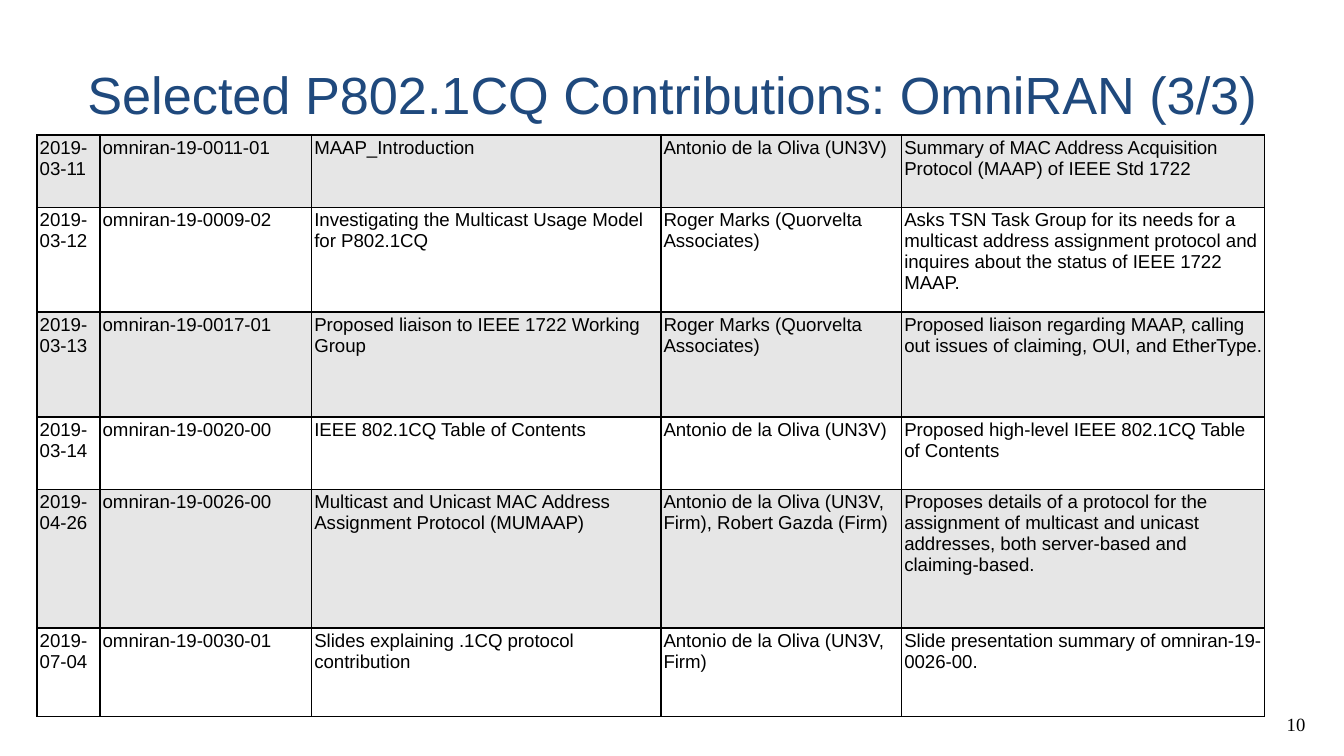
from lxml import etree
from pptx import Presentation
from pptx.dml.color import RGBColor
from pptx.enum.text import MSO_ANCHOR, PP_ALIGN
from pptx.oxml.ns import qn
from pptx.util import Cm, Pt

MIDDLE, TOP = MSO_ANCHOR.MIDDLE, MSO_ANCHOR.TOP
CENTER, RIGHT = PP_ALIGN.CENTER, PP_ALIGN.RIGHT
NAVY = RGBColor(0x1F, 0x49, 0x7D)
BLACK = RGBColor(0, 0, 0)
GRAY = RGBColor(0xE6, 0xE6, 0xE6)
WHITE = RGBColor(0xFF, 0xFF, 0xFF)

COLUMN_WIDTHS = [1.19, 4, 6.6, 4.55, 6.86]
ROW_HEIGHTS = [1.37, 1.98, 1.98, 1.37, 2.62, 1.67]
CONTRIBUTIONS = [
    ("2019-03-11", "omniran-19-0011-01", "MAAP_Introduction",
     "Antonio de la Oliva (UN3V)",
     "Summary of MAC Address Acquisition Protocol (MAAP) of IEEE Std 1722"),
    ("2019-03-12", "omniran-19-0009-02",
     "Investigating the Multicast Usage Model for P802.1CQ",
     "Roger Marks (Quorvelta Associates)",
     "Asks TSN Task Group for its needs for a multicast address assignment "
     "protocol and inquires about the status of IEEE 1722 MAAP."),
    ("2019-03-13", "omniran-19-0017-01",
     "Proposed liaison to IEEE 1722 Working Group",
     "Roger Marks (Quorvelta Associates)",
     "Proposed liaison regarding MAAP, calling out issues of claiming, OUI, and EtherType."),
    ("2019-03-14", "omniran-19-0020-00", "IEEE 802.1CQ Table of Contents",
     "Antonio de la Oliva (UN3V)",
     "Proposed high-level IEEE 802.1CQ Table of Contents"),
    ("2019-04-26", "omniran-19-0026-00",
     "Multicast and Unicast MAC Address Assignment Protocol (MUMAAP)",
     "Antonio de la Oliva (UN3V, Firm), Robert Gazda (Firm)",
     "Proposes details of a protocol for the assignment of multicast and unicast "
     "addresses, both server-based and claiming-based."),
    ("2019-07-04", "omniran-19-0030-01",
     "Slides explaining .1CQ protocol contribution",
     "Antonio de la Oliva (UN3V, Firm)",
     "Slide presentation summary of omniran-19-0026-00."),
]


def style_font(font, name, size, color):
    font.name = name
    font.size = Pt(size)
    font.color.rgb = color


def add_borders(cell, color):
    properties = cell._tc.get_or_add_tcPr()
    for position, side in enumerate(("lnL", "lnR", "lnT", "lnB")):
        line = etree.Element(qn(f"a:{side}"), w=str(Pt(1)))
        fill = etree.SubElement(line, qn("a:solidFill"))
        etree.SubElement(fill, qn("a:srgbClr"), val=str(color))
        properties.insert(position, line)


deck = Presentation()
deck.slide_width = Cm(25.4)
deck.slide_height = Cm(14.29)
slide = deck.slides.add_slide(deck.slide_layouts[6])

text_boxes = [
    ("10", (24.16, 13.34, 0.64, 0.64), "Times New Roman", 10, BLACK, RIGHT, TOP, False),
    ("Selected P802.1CQ Contributions: OmniRAN (3/3)", (1.27, 0.58, 22.86, 2.39),
     "Arial", 28, NAVY, CENTER, MIDDLE, True),
]
for text, place, font_name, size, color, alignment, anchor, wrap in text_boxes:
    box = slide.shapes.add_textbox(*map(Cm, place))
    frame = box.text_frame
    frame.word_wrap = wrap
    frame.vertical_anchor = anchor
    frame.margin_left = frame.margin_right = Cm(0.13)
    frame.margin_top = frame.margin_bottom = Cm(0.13)
    para = frame.paragraphs[0]
    para.text = text
    para.alignment = alignment
    style_font(para.font, font_name, size, color)

table = slide.shapes.add_table(
    len(ROW_HEIGHTS), len(COLUMN_WIDTHS), Cm(0.7), Cm(2.55),
    Cm(sum(COLUMN_WIDTHS)), Cm(sum(ROW_HEIGHTS))).table
table.first_row = False
table.horz_banding = False
for column, width in zip(table.columns, COLUMN_WIDTHS):
    column.width = Cm(width)
for row_index, (row, height) in enumerate(zip(table.rows, ROW_HEIGHTS)):
    row.height = Cm(height)
    for cell, text in zip(row.cells, CONTRIBUTIONS[row_index]):
        cell.margin_left = cell.margin_right = Cm(0.05)
        cell.margin_top = cell.margin_bottom = Cm(0.05)
        cell.fill.solid()
        cell.fill.fore_color.rgb = WHITE if row_index % 2 else GRAY
        add_borders(cell, BLACK)
        para = cell.text_frame.paragraphs[0]
        para.text = text
        style_font(para.font, "Arial", 10, BLACK)

deck.save("out.pptx")
